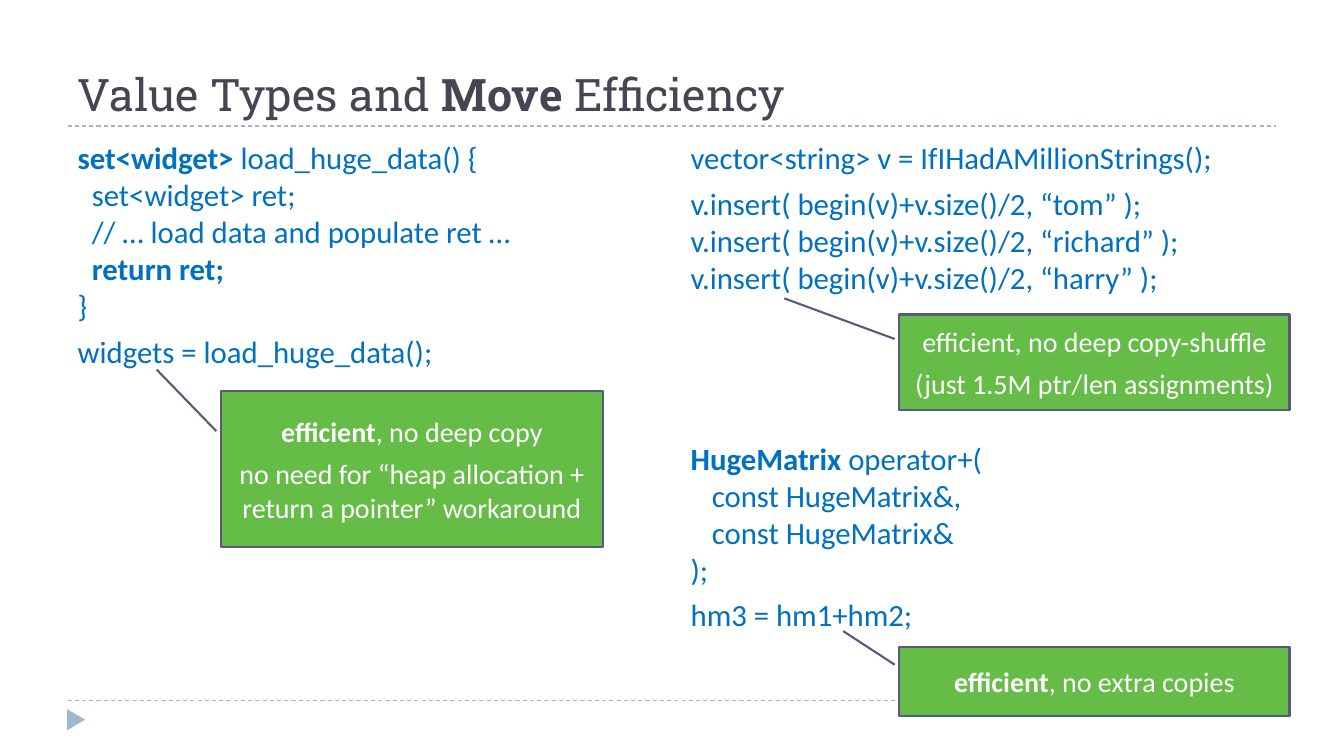
from dataclasses import dataclass

from lxml import etree
from pptx import Presentation
from pptx import util as u
from pptx.dml.color import RGBColor
from pptx.enum import dml, shapes, text
from pptx.oxml import ns


@dataclass(frozen=True)
class Theme:
    title_font: str = "Roboto Slab"
    body_font: str = "Calibri"
    title_color: str = "464653"
    code_color: str = "0070C0"
    note_color: str = "FFFFFF"
    note_fill: str = "65BC46"
    note_line: str = "545C79"
    rule: str = "9FB8CD"
    title_size: int = 32
    code_size: int = 22
    note_size: int = 20
    gap: int = 6


THEME = Theme()


def rgb(value):
    return RGBColor.from_string(value)


def inches(box):
    return [u.Inches(v) for v in box]


def write(p, content, *, font=THEME.body_font, size, color,
          align=text.PP_ALIGN.LEFT, before=0, indent=0.0):
    p.alignment = align
    p.space_before = u.Pt(before)
    p_pr = p._p.get_or_add_pPr()
    p_pr.set("marL", str(u.Inches(indent)))
    p_pr.set("indent", "0")
    etree.SubElement(p_pr, ns.qn("a:buNone"))
    for i, part in enumerate(content.split("**")):
        if part:
            r = p.add_run()
            r.text = part
            r.font.name = font
            r.font.size = u.Pt(size)
            r.font.bold = i % 2 == 1
            r.font.color.rgb = rgb(color)


def fill_frame(tf, lines, anchor, **fmt):
    tf.word_wrap = True
    tf.auto_size = text.MSO_AUTO_SIZE.NONE
    tf.vertical_anchor = anchor
    for i, (content, before, indent) in enumerate(lines):
        p = tf.paragraphs[0] if i == 0 else tf.add_paragraph()
        write(p, content, before=before, indent=indent, **fmt)


def place(sp, box):
    sp.left, sp.top, sp.width, sp.height = inches(box)


def add_rule(s, left, top, width):
    line = s.shapes.add_connector(
        shapes.MSO_CONNECTOR.STRAIGHT, *inches((left, top, left + width, top)))
    line.line.color.rgb = rgb(THEME.rule)
    line.line.width = u.Pt(0.75)
    line.line.dash_style = dml.MSO_LINE.DASH
    etree.SubElement(line._element.spPr, ns.qn("a:effectLst"))


def add_frame(s, box):
    left, top, width, height = box
    for y in (top, top + height):
        add_rule(s, left, y, width)
    sp = s.shapes.add_shape(
        shapes.MSO_SHAPE.ISOSCELES_TRIANGLE,
        *inches((left - 0.02, top + height + 0.1, 0.21, 0.18)))
    sp.rotation = 90
    sp.shadow.inherit = False
    sp.fill.solid()
    sp.fill.fore_color.rgb = rgb(THEME.rule)
    sp.line.fill.background()


def set_title(s, content, box):
    sp = s.shapes.title
    place(sp, box)
    fill_frame(sp.text_frame, [(content, 0, 0)], text.MSO_ANCHOR.BOTTOM,
               font=THEME.title_font, size=THEME.title_size,
               color=THEME.title_color)


def set_code(sp, lines, box):
    place(sp, box)
    fill_frame(sp.text_frame, lines, text.MSO_ANCHOR.TOP,
               size=THEME.code_size, color=THEME.code_color)


def add_note(s, lines, box, tip):
    sp = s.shapes.add_shape(shapes.MSO_SHAPE.LINE_CALLOUT_1, *inches(box))
    for i, value in enumerate((0.256, -0.012, *tip)):
        sp.adjustments[i] = value
    sp.shadow.inherit = False
    sp.fill.solid()
    sp.fill.fore_color.rgb = rgb(THEME.note_fill)
    sp.line.color.rgb = rgb(THEME.note_line)
    sp.line.width = u.Pt(1.5)
    fill_frame(sp.text_frame, [(line, THEME.gap, 0) for line in lines],
               text.MSO_ANCHOR.MIDDLE, size=THEME.note_size,
               color=THEME.note_color, align=text.PP_ALIGN.CENTER)


LOAD_CODE = [
    ("**set<widget> **load_huge_data() {", THEME.gap, 0),
    ("set<widget> ret;", 0, 0.14),
    ("// … load data and populate ret …", 0, 0.14),
    ("**return ret;**", 0, 0.14),
    ("}", 0, 0),
    ("widgets = load_huge_data();", THEME.gap, 0),
]
INSERT_CODE = [
    ("vector<string> v = IfIHadAMillionStrings();", THEME.gap, 0),
    *((f"v.insert( begin(v)+v.size()/2, “{name}” );", before, 0)
      for name, before in (("tom", THEME.gap), ("richard", 0), ("harry", 0))),
]
MATRIX_CODE = [
    ("**HugeMatrix **operator+(", 103, 0),
    ("const HugeMatrix&,", 0, 0.21),
    ("const HugeMatrix&", 0, 0.21),
    (");", 0, 0),
    ("hm3 = hm1+hm2;", THEME.gap, 0),
]
NOTES = [
    (["**efficient**, no deep copy",
      "no need for “heap allocation + return a pointer” workaround"],
     (2.19, 3.88, 3.79, 1.55), (-0.138, -0.168)),
    (["efficient, no deep copy-shuffle", "(just 1.5M ptr/len assignments)"],
     (8.92, 3.12, 3.87, 0.95), (-0.169, -0.295)),
    (["**efficient**, no extra copies"],
     (8.92, 6.42, 3.87, 0.68), (-0.235, -0.144)),
]


def build_comparison(s):
    add_frame(s, (0.67, 1.25, 11.99, 5.7))
    set_title(s, "Value Types and **Move** Efficiency", (0.67, 0.25, 12, 1))
    columns = (LOAD_CODE, INSERT_CODE + MATRIX_CODE)
    for i, lines in enumerate(columns):
        set_code(s.placeholders[i + 1], lines, (0.67 + 6.08 * i, 1.33, 5.89, 5.4))
    for lines, box, tip in NOTES:
        add_note(s, lines, box, tip)


def main():
    prs = Presentation()
    prs.slide_width, prs.slide_height = inches((13.33, 7.5))
    build_comparison(prs.slides.add_slide(prs.slide_layouts[3]))
    prs.save("out.pptx")


if __name__ == "__main__":
    main()
